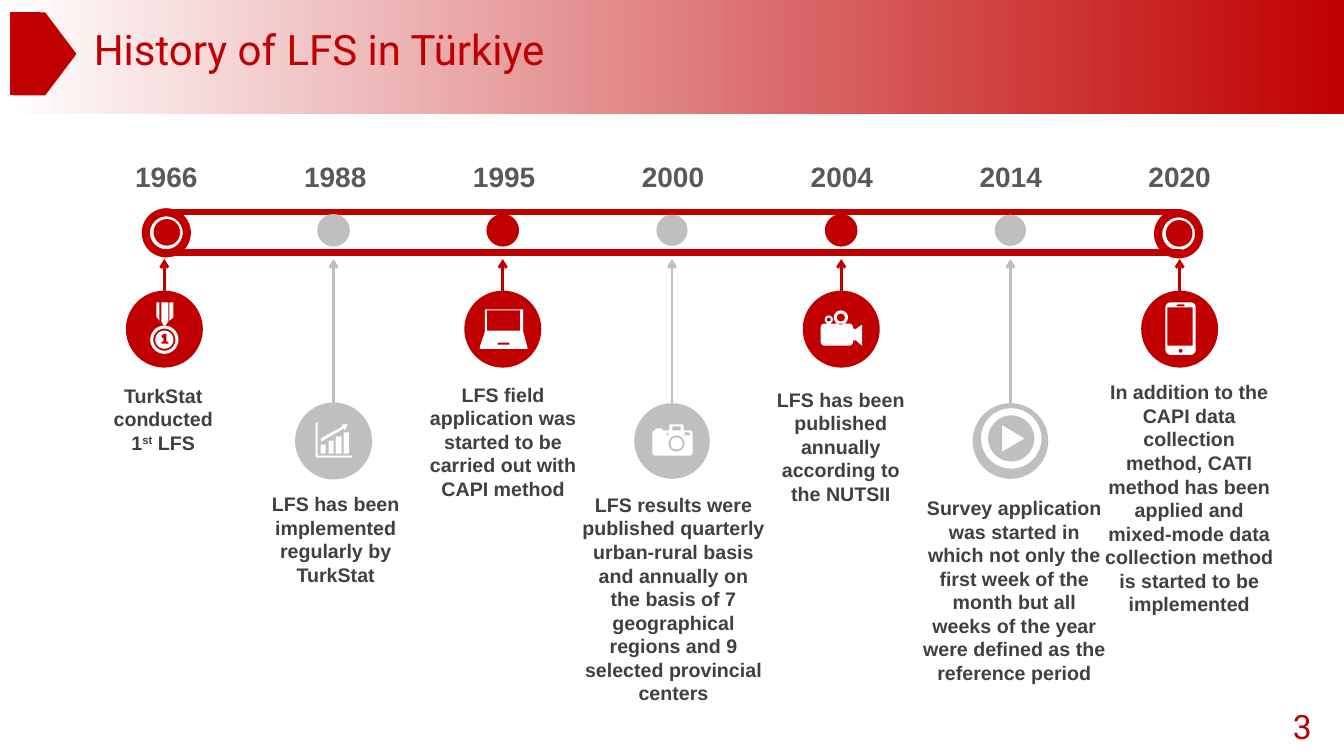
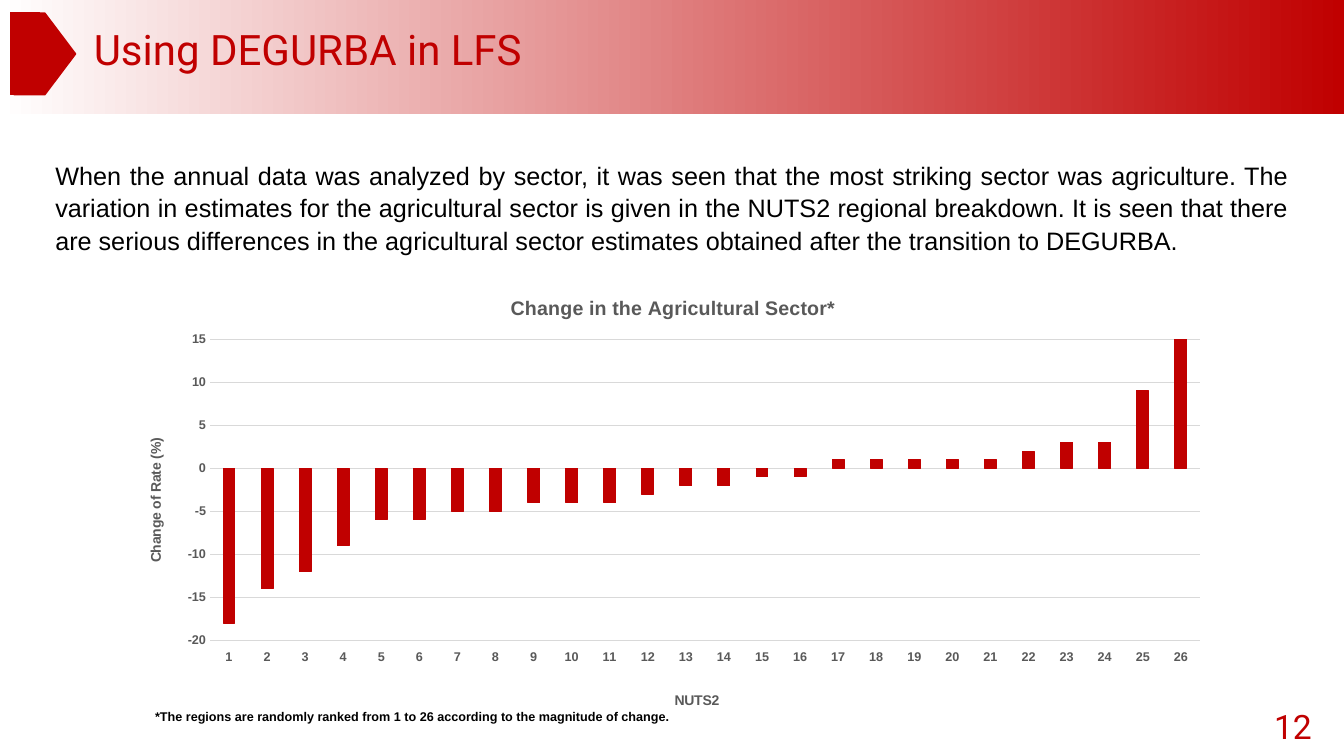
from math import cos, pi, sin

from lxml.etree import SubElement
from pptx import Presentation
from pptx.chart.data import CategoryChartData
from pptx.dml.color import RGBColor
from pptx.enum.chart import XL_CHART_TYPE as CHART, XL_TICK_LABEL_POSITION as LABELS, XL_TICK_MARK as TICK
from pptx.enum.shapes import MSO_CONNECTOR as CONNECTOR, MSO_SHAPE as SHAPE
from pptx.enum.text import MSO_ANCHOR as ANCHOR, MSO_AUTO_SIZE as AUTO_SIZE, PP_ALIGN as ALIGN
from pptx.oxml import parse_xml
from pptx.oxml.ns import nsdecls, qn
from pptx.util import Inches, Pt

HEX = {
    "red": "C00000", "silver": "BFBFBF", "white": "FFFFFF", "black": "000000",
    "year": "595959", "caption": "404040", "grid": "D9D9D9",
}
COLORS = {name: RGBColor.from_string(value) for name, value in HEX.items()}


def write(box, text, size, color, font="Arial", bold=False, align=ALIGN.LEFT,
          anchor=ANCHOR.TOP, line_spacing=None, space_after=None):
    frame = box.text_frame
    frame.word_wrap = True
    frame.auto_size = AUTO_SIZE.NONE
    frame.vertical_anchor = anchor
    for index, line in enumerate(text.split("\n")):
        para = frame.add_paragraph() if index else frame.paragraphs[0]
        para.alignment = align
        para.line_spacing = line_spacing
        para.space_after = space_after
        for position, part in enumerate(line.split("^")):
            span = para.add_run()
            span.text = part
            span.font.size = Pt(size)
            span.font.name = font
            span.font.bold = bold
            span.font.color.rgb = COLORS[color]
            if position % 2:
                span.font._element.set("baseline", "30000")


def draw(page, kind, left, top, width, height, color, line=None):
    shape = page.shapes.add_shape(kind, Inches(left), Inches(top), Inches(width), Inches(height))
    shape.shadow.inherit = False
    shape.fill.solid()
    shape.fill.fore_color.rgb = COLORS[color]
    if line:
        shape.line.color.rgb = COLORS[color]
        shape.line.width = Pt(line)
    else:
        shape.line.fill.background()
    return shape


deck = Presentation()
deck.slide_width = Inches(13.33)
deck.slide_height = Inches(7.5)

pages = []
for heading, number in (("History of LFS in Türkiye", "3"), ("Using DEGURBA in LFS", "12")):
    page = deck.slides.add_slide(deck.slide_layouts[5])
    pages.append(page)
    band = draw(page, SHAPE.RECTANGLE, 0, 0, 13.33, 1.13, "red")
    band.fill.gradient()
    band.fill.gradient_angle = 0
    for stop, name in zip(band.fill.gradient_stops, ("white", "red")):
        stop.color.rgb = COLORS[name]
    draw(page, SHAPE.PENTAGON, 0.14, 0.13, 0.61, 0.81, "red", 1)
    draw(page, SHAPE.RECTANGLE, 0.1, 0.12, 0.29, 0.82, "red", 0.75)

    title = page.shapes.title
    title.left, title.top, title.width, title.height = map(Inches, (0.83, 0.24, 8.44, 0.59))
    write(title, heading, 30, "red", font="Roboto", line_spacing=0.9)
    title.element.getparent().append(title.element)

    box = page.shapes.add_textbox(Inches(12.44), Inches(7), Inches(0.67), Inches(0.4))
    write(box, number, 24, "red", font="Roboto", align=ALIGN.RIGHT, anchor=ANCHOR.MIDDLE)

history, degurba = pages

MILESTONES = [
    ("1966", 0.77, 3.75, 1.7, 0.81, "TurkStat conducted\n1^st^ LFS"),
    ("1988", 2.48, 4.83, 1.7, 1.04, "LFS has been implemented regularly by TurkStat"),
    ("1995", 4.14, 3.74, 1.7, 1.28,
     "LFS field application was started to be carried out with CAPI method"),
    ("2000", 5.67, 4.83, 2.02, 2.22,
     "LFS results were published quarterly urban-rural basis and annually on the basis of "
     "7 geographical regions and 9 selected provincial centers"),
    ("2004", 7.49, 3.79, 1.7, 1.28, "LFS has been published annually according to the NUTSII"),
    ("2014", 9.05, 4.86, 2.02, 1.99,
     "Survey application was started in which not only the first week of the month but all "
     "weeks of the year were defined as the reference period"),
    ("2020", 10.85, 3.83, 1.89, 2.22,
     "In addition to the CAPI data collection method, CATI method has been applied and "
     "mixed-mode data collection method is started to be implemented"),
]
LAST = len(MILESTONES) - 1
DISC_STEP = (11.7 - 1.63) / LAST
YEAR_STEP = (11.19 - 1.14) / LAST

for rail_top in (2.08, 2.48):
    draw(history, SHAPE.RECTANGLE, 1.67, rail_top, 10.05, 0.05, "red", 1)

for index, (year, left, top, width, height, caption) in enumerate(MILESTONES):
    center = 1.63 + DISC_STEP * index
    color, disc_top = ("silver", 4) if index % 2 else ("red", 2.89)
    outline = None if year in ("2000", "2014") else 1

    if index in (0, LAST):
        ring_left, ring_top = (1.42, 2.08) if index == 0 else (11.46, 2.09)
        ring = draw(history, SHAPE.DONUT, ring_left, ring_top, 0.46, 0.46, "red", 2)
        ring.adjustments[0] = 0.114
        draw(history, SHAPE.OVAL, ring_left + 0.11, ring_top + 0.1, 0.25, 0.25, "red", 1)
    else:
        draw(history, SHAPE.OVAL, center - 0.155, 2.13, 0.31, 0.31, color, outline)

    draw(history, SHAPE.OVAL, center - 0.375, disc_top, 0.75, 0.75, color, outline)
    arrow = history.shapes.add_connector(
        CONNECTOR.STRAIGHT, Inches(center), Inches(disc_top), Inches(center), Inches(2.57))
    arrow.line.color.rgb = COLORS[color]
    arrow.line.width = Pt(2)
    SubElement(arrow.line._get_or_add_ln(), qn("a:tailEnd"), type="arrow")
    SubElement(arrow.element.spPr, qn("a:effectLst"))

    box = history.shapes.add_textbox(
        Inches(1.14 + YEAR_STEP * index), Inches(1.53), Inches(1.02), Inches(0.44))
    write(box, year, 20, "year", bold=True, align=ALIGN.CENTER, anchor=ANCHOR.MIDDLE)
    box = history.shapes.add_textbox(Inches(left), Inches(top), Inches(width), Inches(height))
    write(box, caption, 14, "caption", bold=True, align=ALIGN.CENTER, anchor=ANCHOR.MIDDLE)

ICONS = {
    "medal": {
        "circles": [(1.63, 3.37, 0.14), (1.63, 3.37, 0.11), (1.63, 3.37, 0.09)],
        "outlines": [
            [(1.65, 3.31), (1.63, 3.31), (1.6, 3.33), (1.61, 3.36), (1.62, 3.35), (1.62, 3.39),
             (1.6, 3.39), (1.6, 3.41), (1.67, 3.41), (1.67, 3.39), (1.65, 3.39)],
            [(1.68, 3), (1.72, 3), (1.72, 3.15), (1.68, 3.18)],
            [(1.6, 3), (1.67, 3), (1.67, 3.19), (1.63, 3.24), (1.6, 3.19)],
            [(1.55, 3), (1.58, 3), (1.58, 3.18), (1.55, 3.14)],
        ],
    },
    "bar chart": {
        "boxes": [(3.18, 4.41, 3.23, 4.5, 0), (3.26, 4.37, 3.31, 4.5, 0),
                  (3.33, 4.33, 3.39, 4.5, 0), (3.41, 4.29, 3.46, 4.5, 0)],
        "outlines": [
            [(3.39, 4.21), (3.45, 4.21), (3.42, 4.27), (3.41, 4.25), (3.19, 4.38),
             (3.18, 4.35), (3.4, 4.23)],
            [(3.13, 4.19), (3.15, 4.19), (3.15, 4.52), (3.49, 4.52), (3.49, 4.54), (3.13, 4.54)],
        ],
    },
    "laptop": {
        "boxes": [(4.83, 3.08, 5.16, 3.28, 0)],
        "outlines": [
            [(4.94, 3.4), (4.93, 3.42), (5.06, 3.42), (5.05, 3.4)],
            [(4.81, 3.07), (5.19, 3.07), (5.19, 3.29), (5.23, 3.44), (5.23, 3.46),
             (4.76, 3.46), (4.76, 3.44), (4.81, 3.29)],
        ],
    },
    "photo camera": {
        "boxes": [(6.47, 4.27, 6.87, 4.52, 0.03), (6.64, 4.21, 6.78, 4.27, 0),
                  (6.5, 4.25, 6.57, 4.27, 0), (6.61, 4.3, 6.63, 4.32, 0),
                  (6.79, 4.29, 6.84, 4.32, 0), (6.67, 4.23, 6.75, 4.27, 0)],
        "circles": [(6.71, 4.4, 0.08), (6.71, 4.4, 0.06)],
    },
    "film camera": {
        "boxes": [(8.14, 3.21, 8.46, 3.43, 0.04), (8.46, 3.26, 8.48, 3.38, 0)],
        "circles": [(8.34, 3.15, 0.07), (8.34, 3.15, 0.04), (8.22, 3.17, 0.04), (8.22, 3.17, 0.02)],
        "outlines": [[(8.48, 3.27), (8.55, 3.22), (8.55, 3.43), (8.48, 3.37)]],
    },
    "play button": {
        "circles": [(10.03, 4.35, 0.3), (10.03, 4.35, 0.23)],
        "outlines": [[(9.94, 4.22), (10.16, 4.35), (9.94, 4.48)]],
    },
    "phone": {
        "boxes": [(11.56, 3, 11.86, 3.52, 0.05), (11.58, 3.05, 11.83, 3.43, 0),
                  (11.67, 3.02, 11.75, 3.04, 0.01)],
        "circles": [(11.71, 3.48, 0.02)],
    },
}

for parts in ICONS.values():
    contours = list(parts.get("outlines", []))
    boxes = parts.get("boxes", []) + [
        (x - radius, y - radius, x + radius, y + radius, radius)
        for x, y, radius in parts.get("circles", [])]
    for left, top, right, bottom, radius in boxes:
        corners = [(right - radius, bottom - radius), (left + radius, bottom - radius),
                   (left + radius, top + radius), (right - radius, top + radius)]
        steps = 8 if radius else 0
        contours.append([
            (x + radius * cos(angle), y + radius * sin(angle))
            for turn, (x, y) in enumerate(corners)
            for angle in [(turn + step / max(steps, 1)) * pi / 2 for step in range(steps + 1)]])
    contours = [[(Inches(x), Inches(y)) for x, y in contour] for contour in contours]
    builder = history.shapes.build_freeform(*contours[0][0])
    for index, contour in enumerate(contours):
        if index:
            builder.move_to(*contour[0])
        builder.add_line_segments(contour[1:], close=True)
    icon = builder.convert_to_shape()
    icon.shadow.inherit = False
    icon.fill.solid()
    icon.fill.fore_color.rgb = COLORS["white"]
    icon.line.fill.background()

box = degurba.shapes.add_textbox(Inches(0.45), Inches(1.52), Inches(12.43), Inches(1.05))
write(box, "When the annual data was analyzed by sector, it was seen that the most striking sector "
      "was agriculture. The variation in estimates for the agricultural sector is given in the "
      "NUTS2 regional breakdown. It is seen that there are serious differences in the agricultural "
      "sector estimates obtained after the transition to DEGURBA.",
      18, "black", align=ALIGN.JUSTIFY, line_spacing=1.07, space_after=Pt(4))

data = CategoryChartData(number_format="0")
data.categories = [str(region) for region in range(1, 27)]
data.add_series("Series 1", [-18, -14, -12, -9, -6, -6, -5, -5, -4, -4, -4, -3, -2, -2, -1, -1,
                             1, 1, 1, 1, 1, 2, 3, 3, 9, 15])
chart = degurba.shapes.add_chart(
    CHART.COLUMN_CLUSTERED, Inches(1.21), Inches(2.76), Inches(10.91), Inches(4.33), data).chart
chart.has_legend = False
chart.font.name = "Arial"
chart.font.size = Pt(10)

plot = chart.plots[0]
plot.gap_width = 219
plot.overlap = -27
plot.vary_by_categories = False
series = plot.series[0]
series.invert_if_negative = False
series.format.fill.solid()
series.format.fill.fore_color.rgb = COLORS["red"]
series.format.line.color.rgb = COLORS["red"]
series.format.line.width = Pt(0.75)

regions, rates = chart.category_axis, chart.value_axis
rates.minimum_scale, rates.maximum_scale, rates.major_unit = -20, 15, 5
rates.tick_labels.number_format = "0"
rates.tick_labels.number_format_is_linked = False
rates.format.line.fill.background()
regions.tick_label_position = LABELS.LOW
for line in (regions.format.line, rates.major_gridlines.format.line):
    line.color.rgb = COLORS["grid"]
    line.width = Pt(0.75)
for axis in (regions, rates):
    axis.major_tick_mark = axis.minor_tick_mark = TICK.NONE
    font = axis.tick_labels.font
    font.name, font.size, font.bold = "Arial", Pt(9), True
    font.color.rgb = COLORS["year"]

chart.has_title = True
layouts = [(plot._element.getparent(), 0, {"x": 0.08, "y": 0.14, "w": 0.9, "h": 0.69})]
for owner, text, size, x, y in (
        (chart.chart_title, "Change in the Agricultural Sector*", 14, 0.35, 0.03),
        (regions.axis_title, "NUTS2", 10, 0.5, 0.94),
        (rates.axis_title, "Change of Rate (%)", 10, 0.02, 0.36)):
    span = owner.text_frame.paragraphs[0].add_run()
    span.text = text
    span.font.name, span.font.size, span.font.bold = "Arial", Pt(size), True
    span.font.color.rgb = COLORS["year"]
    layouts.append((owner._element, 1, {"x": x, "y": y}))

for parent, position, place in layouts:
    for old in parent.findall(qn("c:layout")):
        parent.remove(old)
    layout = parse_xml(f"<c:layout {nsdecls('c')}><c:manualLayout/></c:layout>")
    if "w" in place:
        SubElement(layout[0], qn("c:layoutTarget"), val="inner")
    for side in ("x", "y"):
        SubElement(layout[0], qn(f"c:{side}Mode"), val="edge")
    for key, value in place.items():
        SubElement(layout[0], qn(f"c:{key}"), val=str(value))
    parent.insert(position, layout)

box = degurba.shapes.add_textbox(Inches(1.44), Inches(6.98), Inches(5.66), Inches(0.25))
write(box, "*The regions are randomly ranked from 1 to 26 according to the magnitude of change.",
      9, "black", bold=True)

deck.save("out.pptx")
